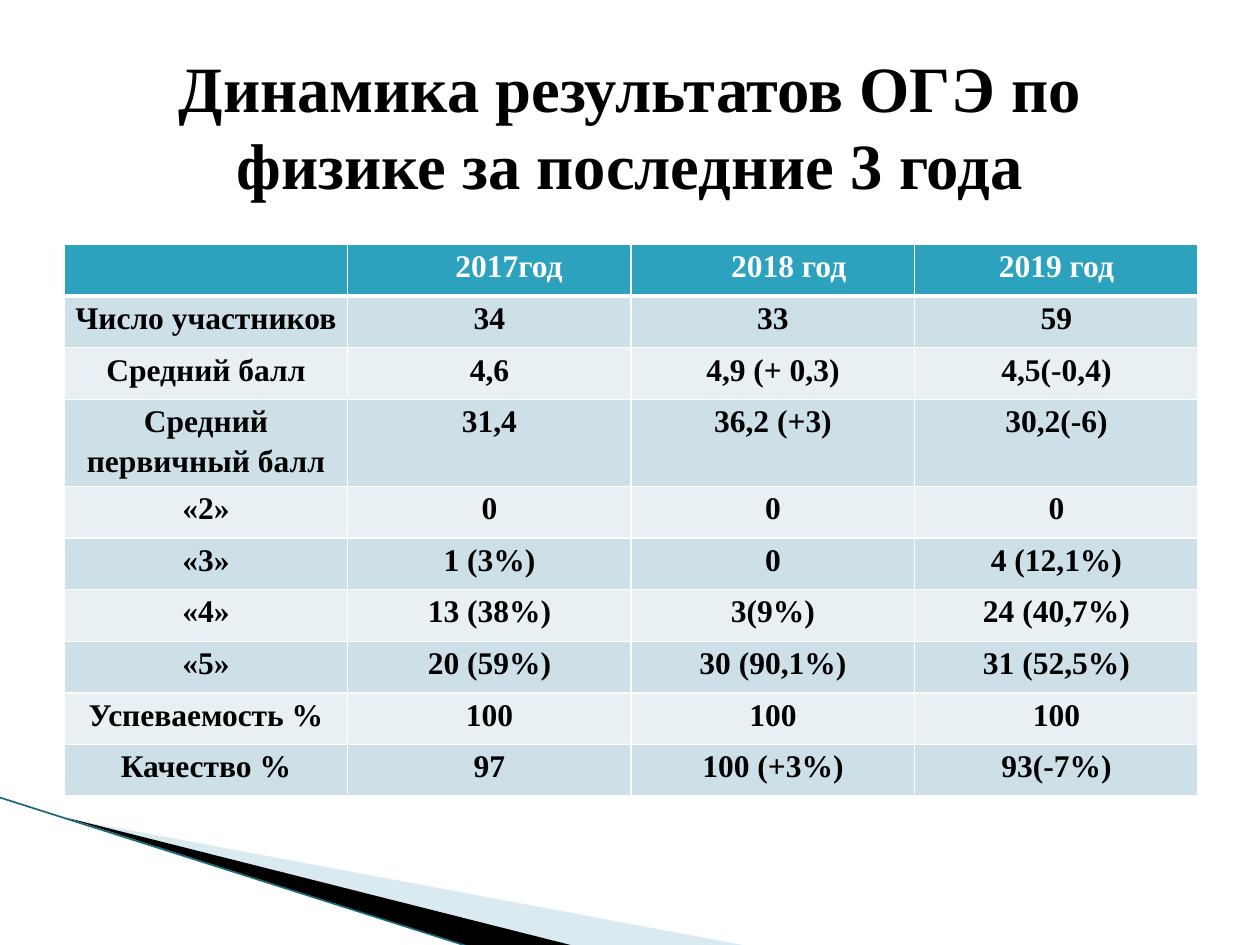
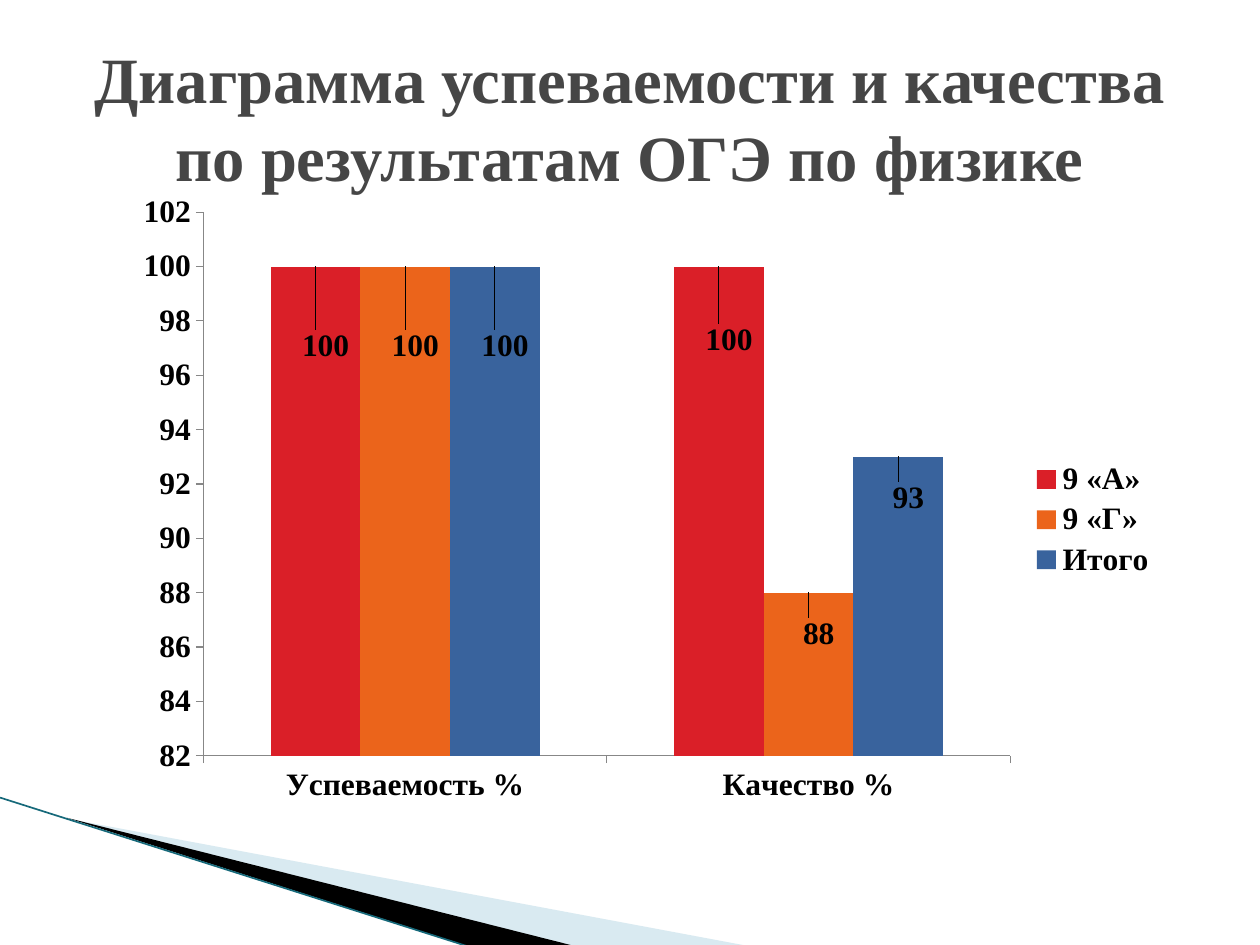
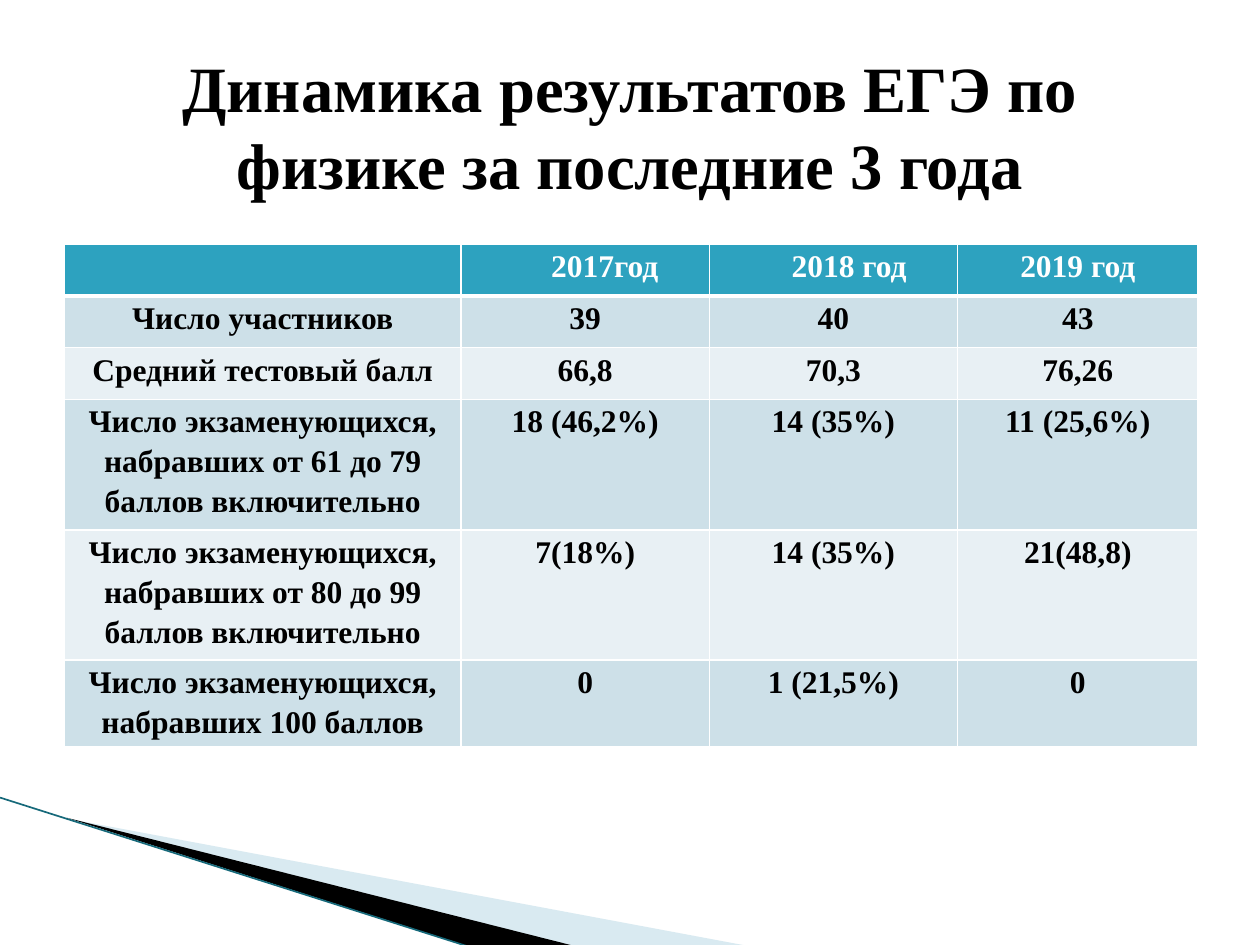
from lxml import etree
from pptx import Presentation
from pptx import util as u
from pptx.chart import data as chart_data
from pptx.dml import color
from pptx.enum import chart as chart_enum
from pptx.enum import shapes, text
from pptx.oxml import parse_xml
from pptx.oxml.ns import nsdecls, qn

COLORS = {
    "black": "000000", "white": "FFFFFF", "gray": "464646", "axis": "878787",
    "header": "2DA2BF", "band_dark": "CDE0E8", "band_light": "E8F0F4",
    "wedge": "A0CBDC", "edge": "16697A",
    "red": "DA1F28", "orange": "EB641B", "blue": "39639D",
}
FONT = "Times New Roman"

# Extra left margin of each header cell, in inches
HEADER_INDENTS = (0, 0.31, 0.25, 0)
YEARS = ("", "2017год", "2018 год", "2019 год")

OGE_ROWS = [
    YEARS,
    ("Число участников", "34", "33", "59"),
    ("Средний балл", "4,6", "4,9 (+ 0,3)", "4,5(-0,4)"),
    ("Средний первичный балл", "31,4", "36,2 (+3)", "30,2(-6)"),
    ("«2»", "0", "0", "0"),
    ("«3»", "1 (3%)", "0", "4 (12,1%)"),
    ("«4»", "13 (38%)", "3(9%)", "24 (40,7%)"),
    ("«5»", "20 (59%)", "30 (90,1%)", "31 (52,5%)"),
    ("Успеваемость %", "100", "100", "100"),
    ("Качество %", "97", "100 (+3%)", "93(-7%)"),
]
EGE_ROWS = [
    YEARS,
    ("Число участников", "39", "40", "43"),
    ("Средний тестовый балл", "66,8", "70,3", "76,26"),
    ("Число экзаменующихся, набравших от 61 до 79 баллов включительно",
     "18 (46,2%)", "14 (35%)", "11 (25,6%)"),
    ("Число экзаменующихся, набравших от 80 до 99 баллов включительно",
     "7(18%)", "14 (35%)", "21(48,8)"),
    ("Число экзаменующихся, набравших 100 баллов", "0", "1 (21,5%)", "0"),
]

CATEGORIES = ("Успеваемость %", "Качество %")
# Name, values, colour, label shifts as fractions of the chart size
CLASSES = [
    ("9 «А»", (100, 100), "red", [(0.01, 0.16), (0.01, 0.15)]),
    ("9 «Г»", (100, 88), "orange", [(0.01, 0.16), (0.01, 0.1)]),
    ("Итого", (100, 93), "blue", [(0.01, 0.16), (0.01, 0.1)]),
]


def rgb(name):
    return color.RGBColor.from_string(COLORS[name])


def set_font(font, size, color_name="black"):
    font.name, font.size, font.bold = FONT, u.Pt(size), True
    font.color.rgb = rgb(color_name)


def manual_layout(x, y, size=None):
    """Chart layout: a shift of a label, or the inner plot area if size is given."""
    fields = [("x", x), ("y", y)]
    if size:
        fields = [("layoutTarget", "inner"), ("xMode", "edge"), ("yMode", "edge"),
                  *fields, ("w", size[0]), ("h", size[1])]
    body = "".join(f'<c:{tag} val="{value}"/>' for tag, value in fields)
    return parse_xml(f'<c:layout {nsdecls("c")}><c:manualLayout>{body}'
                     '</c:manualLayout></c:layout>')


def set_borders(cell, top, bottom):
    """White cell borders; top and bottom widths in points."""
    properties = cell._tc.get_or_add_tcPr()
    for index, (side, width) in enumerate(
            (("L", 1), ("R", 1), ("T", top), ("B", bottom))):
        properties.insert(index, parse_xml(
            f'<a:ln{side} {nsdecls("a")} w="{u.Pt(width)}"><a:solidFill>'
            f'<a:srgbClr val="{COLORS["white"]}"/></a:solidFill></a:ln{side}>'))


class Deck:
    def __init__(self):
        self.presentation = Presentation()
        self.presentation.slide_width = u.Inches(10)
        self.presentation.slide_height = u.Inches(7.5)
        self.slide = None

    def new_slide(self, title, top, color_name="black"):
        layout = self.presentation.slide_layouts[6]
        self.slide = self.presentation.slides.add_slide(layout)
        self.wedge([(0.55, 6.5), (5.95, 7.51), (4.56, 7.51)], "wedge", 40)
        self.wedge([(0.53, 6.49), (4.57, 7.51), (3.72, 7.51)], "black")
        self.line((0, 6.33), (3.71, 7.51), "edge", 0.95)
        self.title(title, top, color_name)

    def wedge(self, points, color_name, opacity=100):
        corners = [(u.Inches(x), u.Inches(y)) for x, y in points]
        builder = self.slide.shapes.build_freeform(*corners[0])
        builder.add_line_segments(corners[1:], close=True)
        shape = builder.convert_to_shape()
        shape.shadow.inherit = False
        shape.fill.solid()
        shape.fill.fore_color.rgb = rgb(color_name)
        shape.line.fill.background()
        if opacity < 100:
            fill_color = shape.element.spPr.find(".//" + qn("a:srgbClr"))
            etree.SubElement(fill_color, qn("a:alpha"), val=str(opacity * 1000))

    def line(self, start, end, color_name, width):
        ends = [u.Inches(value) for value in (*start, *end)]
        connector = self.slide.shapes.add_connector(
            shapes.MSO_CONNECTOR.STRAIGHT, *ends)
        connector.line.color.rgb = rgb(color_name)
        connector.line.width = u.Pt(width)
        etree.SubElement(connector.element.spPr, qn("a:effectLst"))

    def title(self, title, top, color_name):
        box = self.slide.shapes.add_textbox(
            u.Inches(0.5), u.Inches(top), u.Inches(9), u.Inches(1.25))
        frame = box.text_frame
        frame.word_wrap = True
        frame.vertical_anchor = text.MSO_ANCHOR.MIDDLE
        paragraph = frame.paragraphs[0]
        paragraph.text = title
        paragraph.alignment = text.PP_ALIGN.CENTER
        set_font(paragraph.font, 36.9, color_name)

    def table(self, rows, widths):
        row_height = u.Inches(0.41)
        table = self.slide.shapes.add_table(
            len(rows), len(widths), u.Inches(0.51), u.Inches(1.94),
            u.Inches(sum(widths)), row_height * len(rows)).table
        for column, width in zip(table.columns, widths):
            column.width = u.Inches(width)
        for row_index, row in enumerate(rows):
            table.rows[row_index].height = row_height
            for column_index, value in enumerate(row):
                self.cell(table.cell(row_index, column_index), value,
                          row_index, HEADER_INDENTS[column_index])

    def cell(self, cell, value, row_index, header_indent):
        is_header = row_index == 0
        band = "band_dark" if row_index % 2 else "band_light"
        cell.fill.solid()
        cell.fill.fore_color.rgb = rgb("header" if is_header else band)
        set_borders(cell, top=3 if row_index == 1 else 1, bottom=3 if is_header else 1)
        cell.margin_left = u.Inches(0.07 + (header_indent if is_header else 0))
        cell.margin_right = u.Inches(0.07)
        cell.margin_top = cell.margin_bottom = 0
        paragraph = cell.text_frame.paragraphs[0]
        paragraph.text = value
        paragraph.alignment = text.PP_ALIGN.CENTER
        paragraph.line_spacing = 1.15
        set_font(paragraph.font, 18, "white" if is_header else "black")

    def column_chart(self, categories, classes):
        data = chart_data.CategoryChartData()
        data.categories = categories
        for name, values, _, _ in classes:
            data.add_series(name, values)
        chart = self.slide.shapes.add_chart(
            chart_enum.XL_CHART_TYPE.COLUMN_CLUSTERED, u.Inches(1.14), u.Inches(1.55),
            u.Inches(8.14), u.Inches(5.1), data).chart
        set_font(chart.font, 18)
        chart.has_title = False
        chart.has_legend = True
        chart.legend.position = chart_enum.XL_LEGEND_POSITION.RIGHT
        chart.legend.include_in_layout = False
        set_font(chart.legend.font, 18)
        self.axes(chart)
        self.columns(chart.plots[0], classes)

        shifts = [shift for *_, class_shifts in classes for shift in class_shifts]
        for label, shift in zip(chart.element.xpath(".//c:dLbl"), shifts):
            label.insert(1, manual_layout(*shift))
        plot_area = chart.element.xpath(".//c:plotArea")[0]
        for layout in plot_area.findall(qn("c:layout")):
            plot_area.remove(layout)
        plot_area.insert(0, manual_layout(0.058, 0.017, (0.787, 0.854)))

    def axes(self, chart):
        for axis in (chart.category_axis, chart.value_axis):
            axis.has_major_gridlines = False
            axis.major_tick_mark = chart_enum.XL_TICK_MARK.OUTSIDE
            axis.minor_tick_mark = chart_enum.XL_TICK_MARK.NONE
            axis.format.line.color.rgb = rgb("axis")
            set_font(axis.tick_labels.font, 18)
        chart.value_axis.minimum_scale = 82
        chart.value_axis.maximum_scale = 102
        chart.value_axis.major_unit = 2

    def columns(self, plot, classes):
        plot.gap_width = 150
        plot.overlap = 0
        plot.vary_by_categories = False
        for series, (_, values, color_name, _) in zip(plot.series, classes):
            series.format.fill.solid()
            series.format.fill.fore_color.rgb = rgb(color_name)
            series.data_labels.show_value = True
            set_font(series.data_labels.font, 18)
            for index in range(len(values)):
                label = series.points[index].data_label
                label.position = chart_enum.XL_LABEL_POSITION.OUTSIDE_END
                set_font(label.font, 18)


def main():
    deck = Deck()
    deck.new_slide("Динамика результатов ОГЭ по физике за последние 3 года", 0.37)
    deck.table(OGE_ROWS, [2.25] * 4)

    deck.new_slide("Диаграмма успеваемости и качества по результатам ОГЭ по физике",
                   0.3, "gray")
    deck.column_chart(CATEGORIES, CLASSES)

    deck.new_slide("Динамика результатов ЕГЭ по физике за последние 3 года", 0.37)
    deck.table(EGE_ROWS, [3.15, 1.97, 1.97, 1.91])
    deck.presentation.save("out.pptx")


if __name__ == "__main__":
    main()
